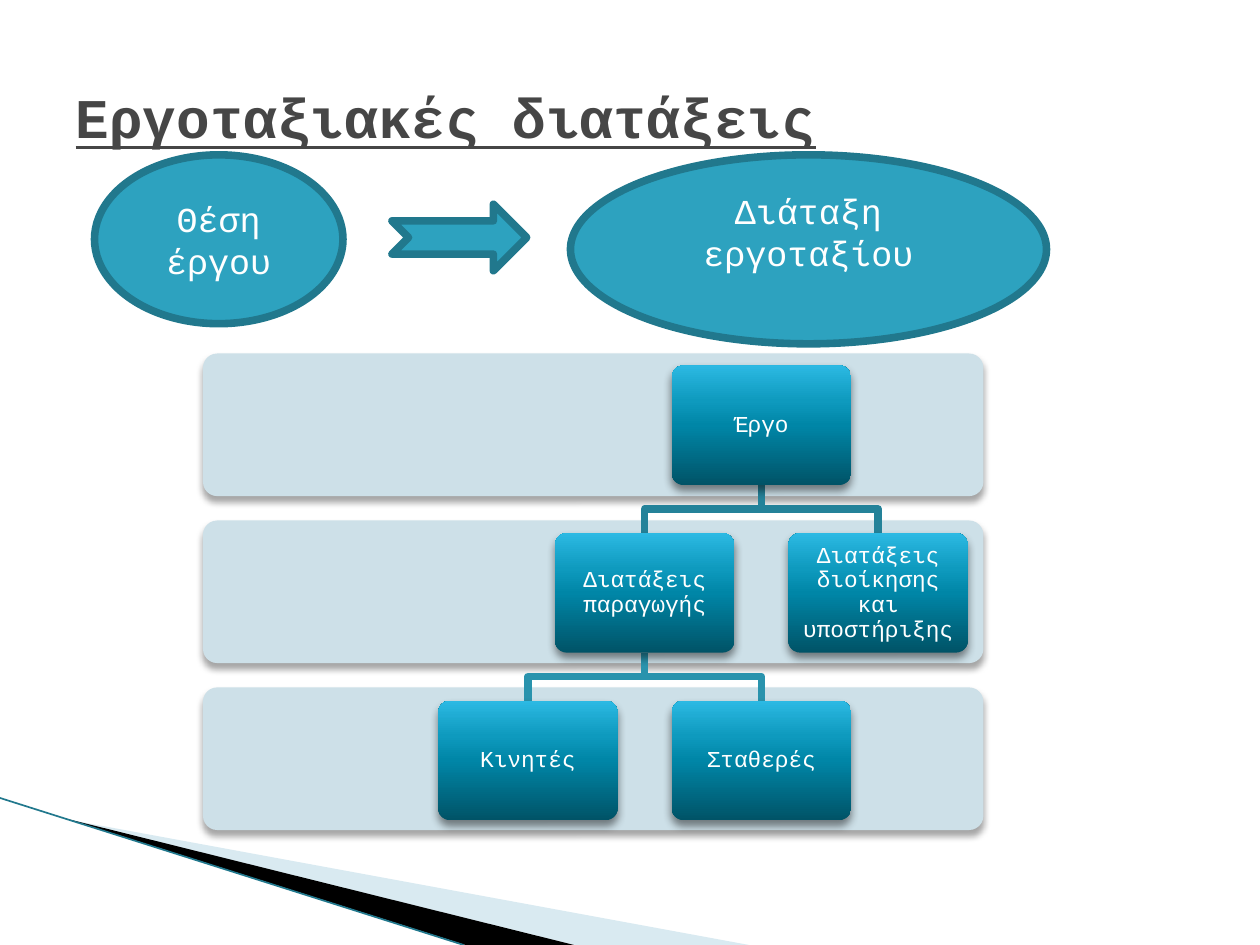
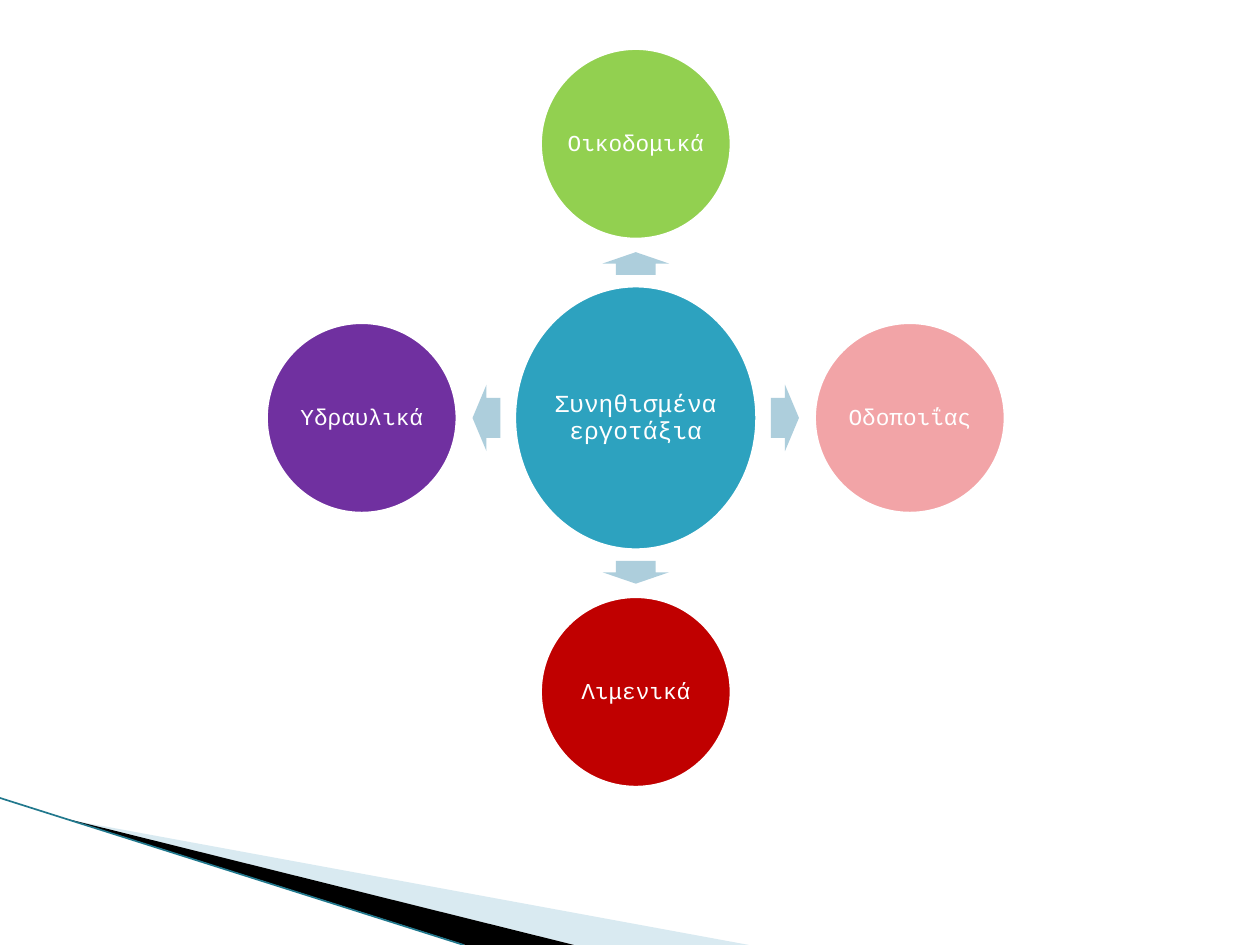
import pptx
import pptx.dml.color
import pptx.enum.shapes
import pptx.enum.text
import pptx.oxml
import pptx.oxml.ns
import pptx.util

Pt = pptx.util.Pt
RGB = pptx.dml.color.RGBColor.from_string
SHAPE = pptx.enum.shapes.MSO_SHAPE
ALIGN = pptx.enum.text.PP_ALIGN
ANCHOR = pptx.enum.text.MSO_ANCHOR
qn = pptx.oxml.ns.qn
NS = pptx.oxml.ns.nsdecls("a")

FONT = "Courier New"
COLORS = {
    "title": "464646", "white": "FFFFFF", "teal": "2DA2BF", "teal_edge": "21788D",
    "band": "CDE0E8", "link_top": "248299", "link_low": "2993AD", "arrow": "ADCEDC",
    "wedge_light": "D9EAF1", "wedge_dark": "000000",
    "green": "92D050", "pink": "F2A4A7", "red": "C00000", "purple": "7030A0",
}
NODE_STOPS = [(0, "005367"), (50, "0086A7"), (70, "0E9ABE"), (100, "2CB9E3")]
EDGE = 4.33


def style(sp, fill=None, line=None, width=EDGE, shadow=None):
    """Set fill and outline; shadow is (opacity %, blur pt, distance pt), cast downwards."""
    sp.shadow.inherit = False
    if fill:
        sp.fill.solid()
        sp.fill.fore_color.rgb = RGB(COLORS[fill])
    else:
        sp.fill.background()
    if line:
        sp.line.color.rgb = RGB(COLORS[line])
        sp.line.width = Pt(width)
    else:
        sp.line.fill.background()
    if shadow:
        alpha, blur, dist = shadow
        sp._element.spPr.find(qn("a:effectLst")).append(pptx.oxml.parse_xml(
            f'<a:outerShdw {NS} blurRad="{Pt(blur)}" dist="{Pt(dist)}" dir="5400000" '
            f'rotWithShape="0"><a:srgbClr val="000000"><a:alpha val="{alpha * 1000}"/>'
            f'</a:srgbClr></a:outerShdw>'))


def write(sp, text, size, inset=0, spacing=0.9):
    tf = sp.text_frame
    tf.text = text
    tf.word_wrap = True
    tf.vertical_anchor = ANCHOR.MIDDLE
    tf.margin_left = tf.margin_right = tf.margin_top = tf.margin_bottom = Pt(inset)
    for p in tf.paragraphs:
        p.alignment = ALIGN.CENTER
        p.line_spacing = spacing
        for r in p.runs:
            r.font.name = FONT
            r.font.size = Pt(size)
            r.font.color.rgb = RGB(COLORS["white"])


prs = pptx.Presentation()
prs.slide_width, prs.slide_height = Pt(720), Pt(540)
layout_slide = prs.slides.add_slide(prs.slide_layouts[5])
types_slide = prs.slides.add_slide(prs.slide_layouts[6])

# Corner wedges on both slides
WEDGES = [
    ("wedge_light", [(39.6, 468.5), (428, 540), (328, 540)]),
    ("wedge_dark", [(38.5, 468), (328, 540), (266, 540)]),
]
for s in prs.slides:
    for color, (start, *rest) in WEDGES:
        fb = s.shapes.build_freeform(Pt(start[0]), Pt(start[1]))
        fb.add_line_segments([(Pt(x), Pt(y)) for x, y in rest])
        style(fb.convert_to_shape(), color)
    edge = s.shapes.add_connector(pptx.enum.shapes.MSO_CONNECTOR.STRAIGHT,
                                  Pt(0), Pt(456), Pt(265), Pt(540))
    edge.line.color.rgb = RGB(COLORS["teal_edge"])
    edge.line.width = Pt(0.95)
    edge._element.spPr.append(pptx.oxml.parse_xml(f"<a:effectLst {NS}/>"))

# Slide 1: title and the step from site to layout
s = layout_slide
title = s.shapes.title
title.left, title.top, title.width, title.height = Pt(36), Pt(21.6), Pt(648), Pt(90)
tf = title.text_frame
tf.text = "Εργοταξιακές διατάξεις"
tf.auto_size = pptx.enum.text.MSO_AUTO_SIZE.NONE
tf.vertical_anchor = ANCHOR.MIDDLE
p = tf.paragraphs[0]
p.alignment = ALIGN.LEFT
font = p.runs[0].font
font.name, font.size, font.bold, font.underline = FONT, Pt(32), True, True
font.color.rgb = RGB(COLORS["title"])

FLOW = [
    (SHAPE.OVAL, 54, 88.5, 142, 96.5, "Θέση έργου"),
    (SHAPE.NOTCHED_RIGHT_ARROW, 224, 116.7, 77, 38, ""),
    (SHAPE.OVAL, 326, 88.5, 272, 108, "Διάταξη\nεργοταξίου"),
]
for kind, x, y, w, h, text in FLOW:
    sp = s.shapes.add_shape(kind, Pt(x), Pt(y), Pt(w), Pt(h))
    style(sp, "teal", "teal_edge")
    if text:
        write(sp, text, 20, 5, 1)
sp.text_frame.margin_bottom = Pt(25)

# Slide 1: three bands with the hierarchy on top
for level in range(3):
    band = s.shapes.add_shape(SHAPE.ROUNDED_RECTANGLE, Pt(116), Pt(202 + 95.4 * level),
                              Pt(446), Pt(81.5))
    band.adjustments[0] = 0.1
    style(band, "band", shadow=(35, 4, 3))

NODE_W, NODE_H, ROW_STEP, HALF_STEP = 102.5, 68.4, 95.76, 66.7
# name: (text, column in half steps, level, parent)
NODES = {
    "project": ("Έργο", 2, 0, None),
    "production": ("Διατάξεις παραγωγής", 1, 1, "project"),
    "admin": ("Διατάξεις διοίκησης και υποστήριξης", 3, 1, "project"),
    "mobile": ("Κινητές", 0, 2, "production"),
    "fixed": ("Σταθερές", 2, 2, "production"),
}
centers = {name: 301.7 + HALF_STEP * node[1] for name, node in NODES.items()}
tops = {name: 208.8 + ROW_STEP * node[2] for name, node in NODES.items()}

for name, (_, _, level, parent) in NODES.items():
    if parent:
        x1, y1 = centers[parent], tops[parent] + NODE_H
        x2, y2 = centers[name], tops[name]
        middle = (y1 + y2) / 2
        fb = s.shapes.build_freeform(Pt(x1), Pt(y1))
        fb.add_line_segments([(Pt(x1), Pt(middle)), (Pt(x2), Pt(middle)), (Pt(x2), Pt(y2))],
                             close=False)
        style(fb.convert_to_shape(), line="link_top" if level == 1 else "link_low")

for name, (text, *_) in NODES.items():
    node = s.shapes.add_shape(SHAPE.ROUNDED_RECTANGLE, Pt(centers[name] - NODE_W / 2),
                              Pt(tops[name]), Pt(NODE_W), Pt(NODE_H))
    node.adjustments[0] = 0.1
    style(node, shadow=(45, 5, 3))
    node.fill.gradient()
    node.fill.gradient_angle = 90
    stops = node._element.spPr.find(qn("a:gradFill")).find(qn("a:gsLst"))
    for stop in list(stops):
        stops.remove(stop)
    for pos, color in NODE_STOPS:
        stops.append(pptx.oxml.parse_xml(
            f'<a:gs {NS} pos="{pos * 1000}"><a:srgbClr val="{color}"/></a:gs>'))
    write(node, text, 13, 3.6)

# Slide 2: hub with four kinds of site around it
s = types_slide
CX, CY, RADIUS, CIRCLE = 363.3, 238.8, 156.6, 111.6
HUB_W, HUB_H = 141, 153.4
hub = s.shapes.add_shape(SHAPE.OVAL, Pt(CX - HUB_W / 2), Pt(CY - HUB_H / 2),
                         Pt(HUB_W), Pt(HUB_H))
style(hub, "teal", "white")
write(hub, "Συνηθισμένα εργοτάξια", 14)

# text, fill, direction x, direction y, arrow rotation
SITES = [
    ("Οικοδομικά", "green", 0, -1, 270),
    ("Οδοποιΐας", "pink", 1, 0, 0),
    ("Λιμενικά", "red", 0, 1, 90),
    ("Υδραυλικά", "purple", -1, 0, 180),
]
for text, color, dx, dy, rotation in SITES:
    length, distance = (16, 85.3) if dx else (13, 88.2)
    breadth = 38
    arrow = s.shapes.add_shape(SHAPE.RIGHT_ARROW, Pt(CX + dx * distance - length / 2),
                               Pt(CY + dy * distance - breadth / 2), Pt(length), Pt(breadth))
    arrow.rotation = rotation
    arrow.adjustments[0], arrow.adjustments[1] = 0.6, 0.5
    style(arrow, "arrow")
    circle = s.shapes.add_shape(SHAPE.OVAL, Pt(CX + dx * RADIUS - CIRCLE / 2),
                                Pt(CY + dy * RADIUS - CIRCLE / 2), Pt(CIRCLE), Pt(CIRCLE))
    style(circle, color, "white")
    write(circle, text, 13)
    circle.text_frame.word_wrap = False

prs.save("out.pptx")
